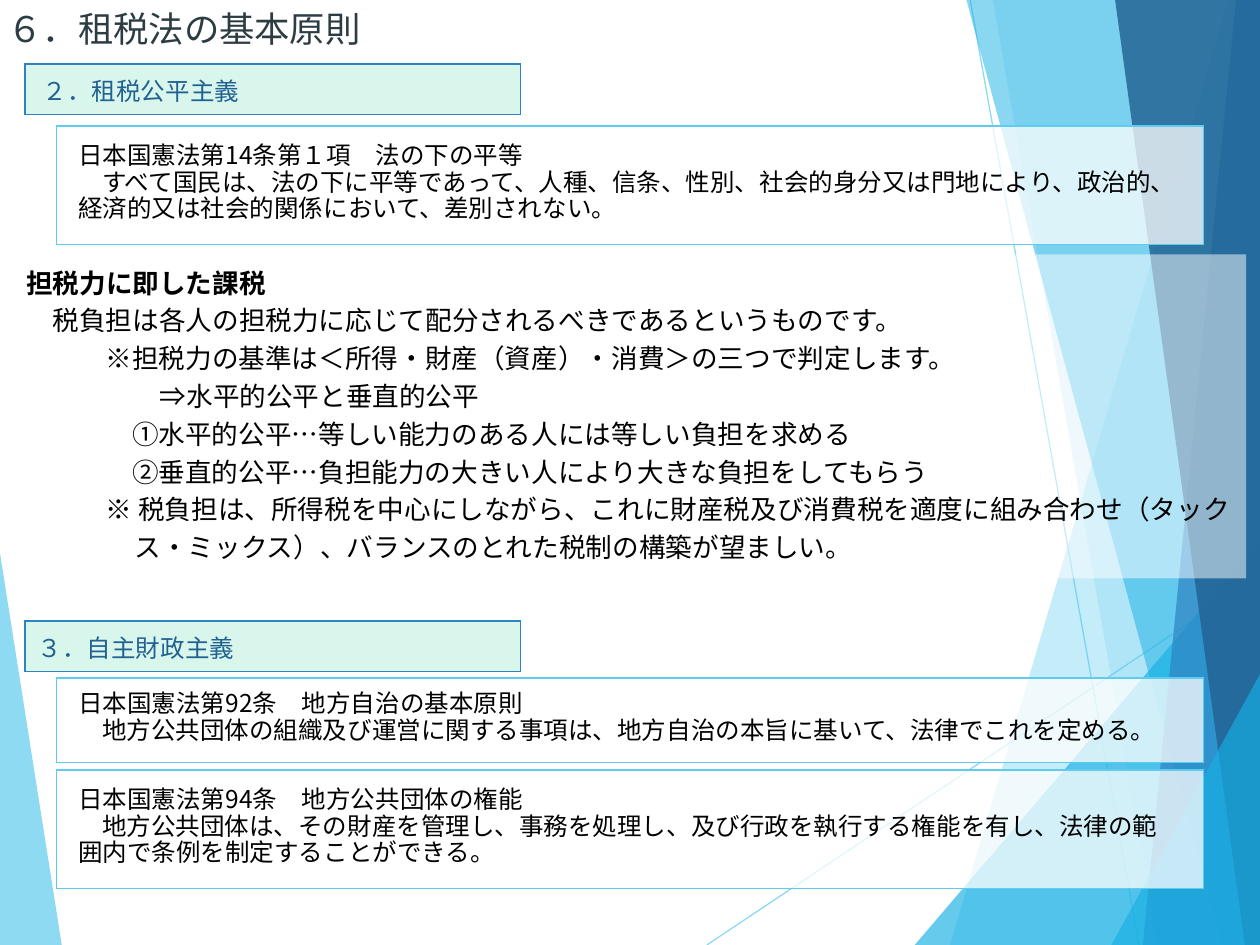
from lxml import etree
from pptx import Presentation
from pptx.dml.color import RGBColor
from pptx.enum.shapes import MSO_CONNECTOR, MSO_SHAPE
from pptx.enum.text import MSO_ANCHOR, PP_ALIGN
from pptx.oxml.ns import qn
from pptx.util import Inches, Pt

MIDDLE, TOP = MSO_ANCHOR.MIDDLE, MSO_ANCHOR.TOP
LEFT = PP_ALIGN.LEFT
STRAIGHT, RECTANGLE = MSO_CONNECTOR.STRAIGHT, MSO_SHAPE.RECTANGLE
FONT = "Noto Sans CJK JP"
COLORS = {
    "sky": "5FCBEF", "cyan": "17B0E4", "blue": "2E83C3", "navy": "226292",
    "mint": "D9F6EC", "white": "FFFFFF", "black": "000000", "slate": "2C3C43",
}

# Content: (text, left margin, first-line indent) in each paragraph
TITLE = "６．租税法の基本原則"
HEADINGS = [  # text, top, left inset
    ("２．租税公平主義", 0.51, 0.14),
    ("３．自主財政主義", 4.93, 0.1),
]
ARTICLES = [  # top, height, title, provision
    (1, 0.94, "日本国憲法第14条第１項　法の下の平等",
     "すべて国民は、法の下に平等であって、人種、信条、性別、社会的身分又は門地により、"
     "政治的、経済的又は社会的関係において、差別されない。"),
    (5.38, 0.67, "日本国憲法第92条　地方自治の基本原則",
     "地方公共団体の組織及び運営に関する事項は、地方自治の本旨に基いて、法律でこれを定める。"),
    (6.11, 0.94, "日本国憲法第94条　地方公共団体の権能",
     "地方公共団体は、その財産を管理し、事務を処理し、及び行政を執行する権能を有し、"
     "法律の範囲内で条例を制定することができる。"),
]
EXPLANATION_TITLE = "担税力に即した課税"
EXPLANATION = [
    ("税負担は各人の担税力に応じて配分されるべきであるというものです。", 0.21, 0),
    ("※担税力の基準は＜所得・財産（資産）・消費＞の三つで判定します。", 0.63, 0),
    ("⇒水平的公平と垂直的公平", 1.06, 0),
    ("①水平的公平…等しい能力のある人には等しい負担を求める", 0.84, 0),
    ("②垂直的公平…負担能力の大きい人により大きな負担をしてもらう", 0.84, 0),
    ("※ 税負担は、所得税を中心にしながら、これに財産税及び消費税を適度に組み合わせ"
     "（タックス・ミックス）、バランスのとれた税制の構築が望ましい。", 0.86, -0.23),
]

# Background: lines (start, end) and facets (colour, opacity, corners)
RAYS = [((5.61, 7.5), (10, 4.57)), ((7.7, 0), (9.04, 7.5))]
FACETS = [
    ("sky", 36, [(9.75, 0), (7.54, 7.5), (10, 7.5), (10, 0)]),
    ("sky", 20, [(7.88, 0), (9.19, 7.5), (10, 7.5), (10, 0)]),
    ("cyan", 66, [(7.26, 7.5), (10, 4.29), (10, 7.5)]),
    ("cyan", 50, [(7.67, 0), (9.7, 7.5), (10, 7.5), (10, 0)]),
    ("blue", 70, [(9.81, 0), (9.07, 7.5), (10, 7.5), (10, 0)]),
    ("navy", 82, [(8.85, 0), (9.88, 7.5), (10, 7.5), (10, 0)]),
    ("cyan", 66, [(8.82, 7.5), (10, 5.35), (10, 7.5)]),
]
LEFT_FACET = ("sky", 70, [(0, 4.39), (0.49, 7.5), (0, 7.5)])

deck = Presentation()
deck.slide_width, deck.slide_height = Inches(10), Inches(7.5)
page = deck.slides.add_slide(deck.slide_layouts[6])


def rgb(name):
    return RGBColor.from_string(COLORS[name])


def set_opacity(parent, percent):
    color = parent.find(qn("a:solidFill"))[0]
    etree.SubElement(color, qn("a:alpha"), val=str(percent * 1000))


def paint(shape, color, opacity):
    shape.shadow.inherit = False
    shape.fill.solid()
    shape.fill.fore_color.rgb = rgb(color)
    shape.line.fill.background()
    set_opacity(shape._element.spPr, opacity)


def write(frame, text, size=14, color="black", bold=False, spacing=None,
          margin=0, indent=0):
    """Fill the empty first paragraph, or add another one."""
    first = frame.paragraphs[0]
    para = frame.add_paragraph() if first.runs else first
    para.alignment = LEFT
    if spacing:
        para.line_spacing = Pt(spacing)
    properties = para._p.get_or_add_pPr()
    properties.set("marL", str(Inches(margin)))
    properties.set("indent", str(Inches(indent)))
    span = para.add_run()
    span.text = text
    span.font.size, span.font.bold, span.font.name = Pt(size), bold, FONT
    span.font.color.rgb = rgb(color)
    etree.SubElement(span._r.get_or_add_rPr(), qn("a:ea"), typeface=FONT)


def add_facet(color, opacity, corners):
    points = [(Inches(x), Inches(y)) for x, y in corners]
    builder = page.shapes.build_freeform(*points[0])
    builder.add_line_segments(points[1:], close=True)
    paint(builder.convert_to_shape(), color, opacity)


def add_ray(start, end):
    ray = page.shapes.add_connector(STRAIGHT, *map(Inches, start + end))
    ray.line.width = Pt(0.75)
    ray.line.color.rgb = rgb("sky")
    properties = ray._element.spPr
    set_opacity(properties.find(qn("a:ln")), 70)
    etree.SubElement(properties, qn("a:effectLst"))


def add_cell(left, top, width, height, fill, border, opacity=100,
             inset_x=0.1, inset_y=0.05):
    """Add a one-cell table and return its cell's text frame."""
    table = page.shapes.add_table(
        1, 1, *map(Inches, (left, top, width, height))).table
    table.first_row = table.horz_banding = False
    cell = table.cell(0, 0)
    cell.vertical_anchor = MIDDLE
    cell.margin_left = cell.margin_right = Inches(inset_x)
    cell.margin_top = cell.margin_bottom = Inches(inset_y)
    properties = cell._tc.get_or_add_tcPr()
    for side in ("lnL", "lnR", "lnT", "lnB"):
        edge = etree.SubElement(properties, qn("a:" + side), w=str(Pt(1)))
        solid = etree.SubElement(edge, qn("a:solidFill"))
        etree.SubElement(solid, qn("a:srgbClr"), val=COLORS[border])
    cell.fill.solid()
    cell.fill.fore_color.rgb = rgb(fill)
    if opacity < 100:
        set_opacity(properties, opacity)
    return cell.text_frame


# Background
add_facet(*LEFT_FACET)
for ray_ends in RAYS:
    add_ray(*ray_ends)
for facet in FACETS:
    add_facet(*facet)

# Explanation panel
panel = page.shapes.add_shape(
    RECTANGLE, Inches(0.11), Inches(2.02), Inches(9.78), Inches(2.57))
paint(panel, "white", 50)
body = panel.text_frame
body.word_wrap, body.vertical_anchor = True, TOP
write(body, EXPLANATION_TITLE, size=15.2, bold=True, spacing=21.6)
for text, margin, indent in EXPLANATION:
    write(body, text, size=15.2, spacing=21.6, margin=margin, indent=indent)

# Constitution articles
for top, height, heading, provision in ARTICLES:
    frame = add_cell(0.45, top, 9.1, height, "white", "sky", opacity=75,
                     inset_x=0.17, inset_y=0.06)
    write(frame, heading, spacing=15)
    write(frame, provision, spacing=15, indent=0.19)

# Title and section headings
box = page.shapes.add_textbox(0, 0, Inches(4), Inches(0.45))
title = box.text_frame
title.word_wrap, title.vertical_anchor = True, MIDDLE
title.margin_left = Inches(0.06)
title.margin_right = title.margin_top = title.margin_bottom = 0
write(title, TITLE, size=20.2, color="slate")
for text, top, inset in HEADINGS:
    frame = add_cell(0.2, top, 3.93, 0.4, "mint", "blue", inset_x=inset)
    write(frame, text, color="navy")

deck.save("out.pptx")
